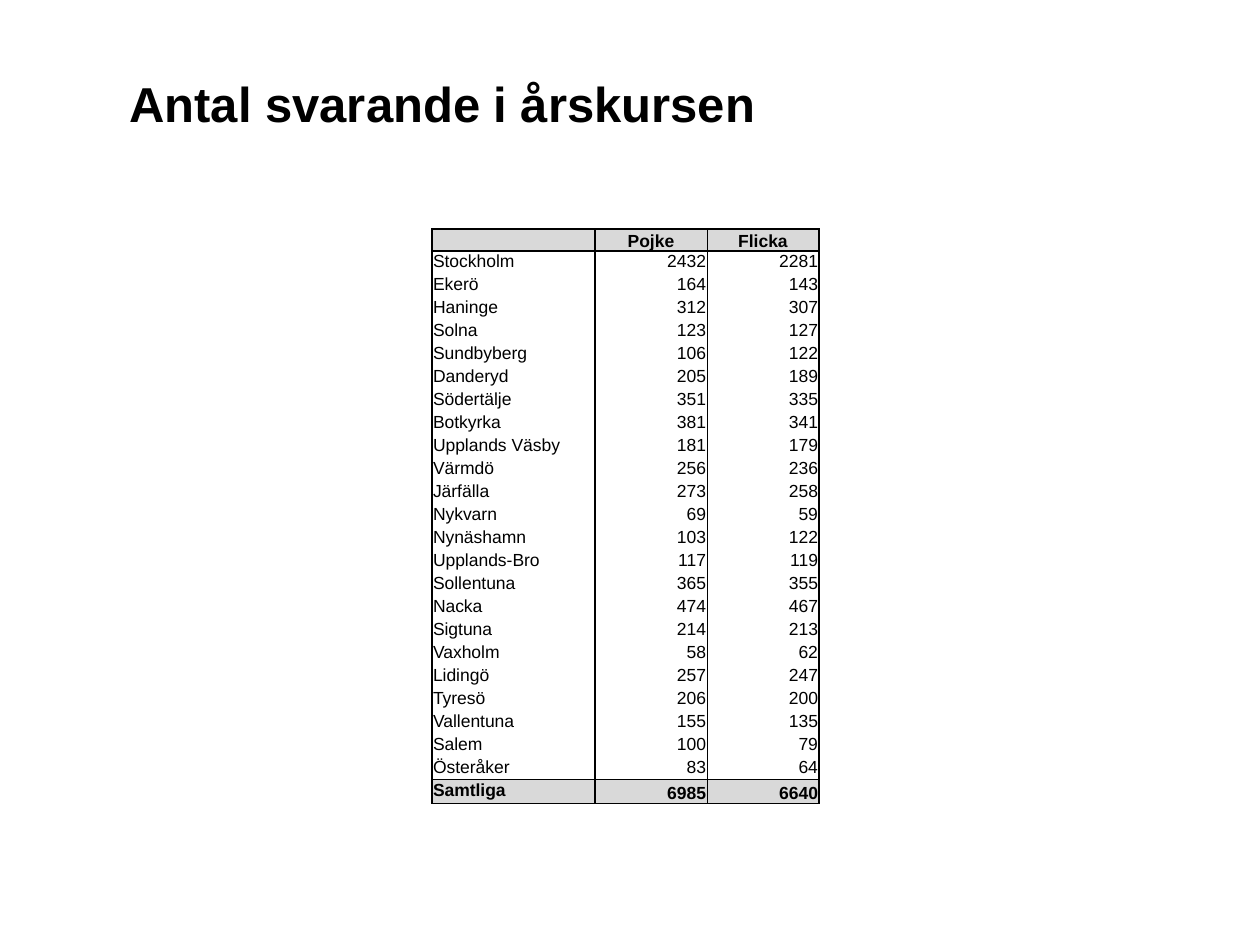
from typing import NamedTuple

from lxml import etree
from pptx import Presentation
from pptx import util as u
from pptx.dml.color import RGBColor
from pptx.enum import text
from pptx.oxml.ns import qn

PX = 914400 / 126
BLACK = RGBColor(0, 0, 0)
GREY = RGBColor(0xD9, 0xD9, 0xD9)
FONT = "Arial"
THICK, THIN = 1, 0.5
COLUMN_WIDTHS = (163, 112, 112)
HEADER_HEIGHT, BODY_HEIGHT, TOTAL_HEIGHT = 21, 23, 24


class Respondents(NamedTuple):
    place: str
    boys: int | str
    girls: int | str


HEADER = Respondents("", "Pojke", "Flicka")
MUNICIPALITIES = [
    Respondents("Stockholm", 2432, 2281),
    Respondents("Ekerö", 164, 143),
    Respondents("Haninge", 312, 307),
    Respondents("Solna", 123, 127),
    Respondents("Sundbyberg", 106, 122),
    Respondents("Danderyd", 205, 189),
    Respondents("Södertälje", 351, 335),
    Respondents("Botkyrka", 381, 341),
    Respondents("Upplands Väsby", 181, 179),
    Respondents("Värmdö", 256, 236),
    Respondents("Järfälla", 273, 258),
    Respondents("Nykvarn", 69, 59),
    Respondents("Nynäshamn", 103, 122),
    Respondents("Upplands-Bro", 117, 119),
    Respondents("Sollentuna", 365, 355),
    Respondents("Nacka", 474, 467),
    Respondents("Sigtuna", 214, 213),
    Respondents("Vaxholm", 58, 62),
    Respondents("Lidingö", 257, 247),
    Respondents("Tyresö", 206, 200),
    Respondents("Vallentuna", 155, 135),
    Respondents("Salem", 100, 79),
    Respondents("Österåker", 83, 64),
]
TOTAL = Respondents("Samtliga", 6985, 6640)


def px(length: int) -> u.Emu:
    return u.Emu(round(length * PX))


def style_text(paragraph, size: int, bold: bool) -> None:
    for run in paragraph.runs:
        run.font.name = FONT
        run.font.size = u.Pt(size)
        run.font.bold = bold
        run.font.color.rgb = BLACK


def add_border(cell, side: str, width: float) -> None:
    line = etree.SubElement(cell._tc.get_or_add_tcPr(), qn(f"a:ln{side}"))
    if not width:
        line.set("w", "0")
        etree.SubElement(line, qn("a:noFill"))
        return
    line.set("w", str(u.Pt(width)))
    fill = etree.SubElement(line, qn("a:solidFill"))
    etree.SubElement(fill, qn("a:srgbClr"), val=str(BLACK))


def fill_cell(cell, value: int | str, row: int, column: int, last_row: int) -> None:
    is_header, is_total = row == 0, row == last_row
    shaded = is_header or is_total
    cell.margin_left = cell.margin_right = cell.margin_top = px(1)
    cell.margin_bottom = 0
    cell.vertical_anchor = (
        text.MSO_ANCHOR.BOTTOM if shaded and column else text.MSO_ANCHOR.TOP
    )
    paragraph = cell.text_frame.paragraphs[0]
    if value == "":
        etree.SubElement(paragraph._p, qn("a:endParaRPr"), sz="1000")
    else:
        paragraph.text = str(value)
    if column:
        paragraph.alignment = text.PP_ALIGN.CENTER if is_header else text.PP_ALIGN.RIGHT
    style_text(paragraph, 10, shaded)

    add_border(cell, "L", THIN if column == 2 else THICK)
    add_border(cell, "R", THIN if column == 1 else THICK)
    add_border(cell, "T", THICK if shaded or row == 1 else 0)
    add_border(cell, "B", THICK if shaded or row == last_row - 1 else 0)
    if shaded:
        cell.fill.solid()
        cell.fill.fore_color.rgb = GREY
    else:
        cell.fill.background()


def add_title(slide) -> None:
    title = slide.shapes.add_textbox(px(117), px(47), px(1017), px(111))
    frame = title.text_frame
    frame.word_wrap = True
    frame.vertical_anchor = text.MSO_ANCHOR.MIDDLE
    frame.text = "Antal svarande i årskursen"
    style_text(frame.paragraphs[0], 28, True)


def add_respondents(slide, left: int, top: int) -> None:
    rows = [HEADER, *MUNICIPALITIES, TOTAL]
    heights = [HEADER_HEIGHT, *[BODY_HEIGHT] * len(MUNICIPALITIES), TOTAL_HEIGHT]
    respondents = slide.shapes.add_table(
        len(rows), len(COLUMN_WIDTHS), px(left), px(top),
        px(sum(COLUMN_WIDTHS)), px(sum(heights)),
    ).table
    respondents.first_row = respondents.horz_banding = False
    for column, width in zip(respondents.columns, COLUMN_WIDTHS):
        column.width = px(width)
    for i, (values, height) in enumerate(zip(rows, heights)):
        respondents.rows[i].height = px(height)
        for j, value in enumerate(values):
            fill_cell(respondents.cell(i, j), value, i, j, len(rows) - 1)


def main() -> None:
    deck = Presentation()
    deck.slide_width, deck.slide_height = px(1260), px(945)
    slide = deck.slides.add_slide(deck.slide_layouts[6])
    add_title(slide)
    add_respondents(slide, 432, 229)
    deck.save("out.pptx")


if __name__ == "__main__":
    main()
